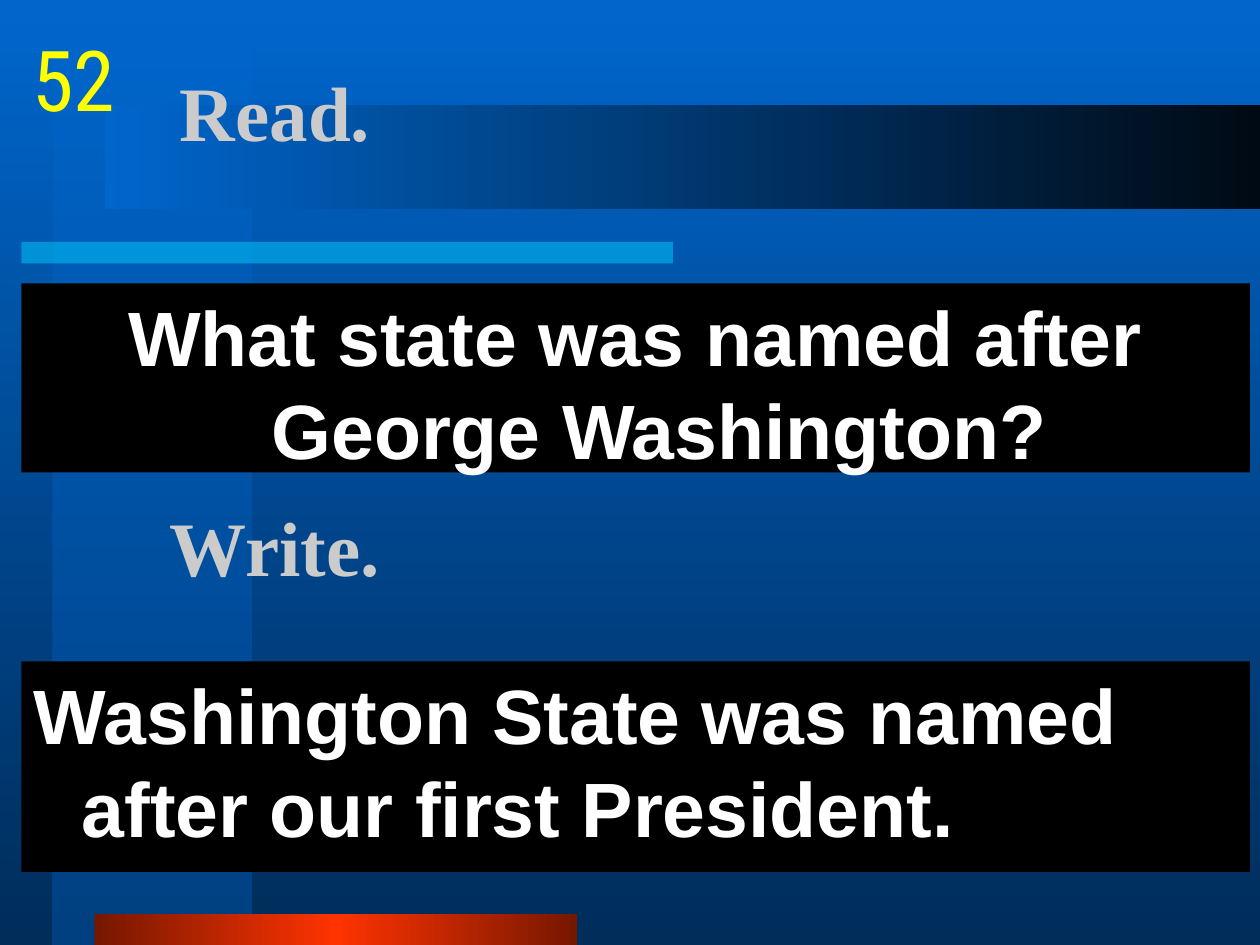
import lxml.etree
import pptx
import pptx.dml.color
import pptx.enum.shapes
import pptx.enum.text
import pptx.oxml.ns
import pptx.util

Inches = pptx.util.Inches
RGBColor = pptx.dml.color.RGBColor
Align = pptx.enum.text.PP_ALIGN
Anchor = pptx.enum.text.MSO_ANCHOR
qn = pptx.oxml.ns.qn

BLUE = RGBColor(0x00, 0x66, 0xCC)
MID_BLUE = RGBColor(0x00, 0x53, 0xA6)
NAVY = RGBColor(0x00, 0x2D, 0x5A)
MIDNIGHT = RGBColor(0x00, 0x0A, 0x14)
CYAN = RGBColor(0x00, 0xCC, 0xFF)
RED = RGBColor(0xFF, 0x33, 0x00)
DARK_RED = RGBColor(0x76, 0x17, 0x00)
BLACK = RGBColor(0x00, 0x00, 0x00)
WHITE = RGBColor(0xFF, 0xFF, 0xFF)
GRAY = RGBColor(0xCB, 0xCB, 0xCB)
YELLOW = RGBColor(0xFF, 0xFF, 0x00)


def set_alpha(color_element, percent):
    """Make a colour partly transparent."""
    alpha = lxml.etree.SubElement(color_element, qn("a:alpha"))
    alpha.set("val", str(percent * 1000))


def fill_gradient(fill, owner, colors, angle=0, alpha=100):
    """Fill with evenly spaced colours; the angle runs counterclockwise."""
    fill.gradient()
    fill.gradient_angle = angle
    stops = next(owner.iter(qn("a:gsLst")))
    for stop in list(stops):
        stops.remove(stop)
    for index, color in enumerate(colors):
        stop = lxml.etree.SubElement(stops, qn("a:gs"))
        stop.set("pos", str(100000 * index // (len(colors) - 1)))
        value = lxml.etree.SubElement(stop, qn("a:srgbClr"))
        value.set("val", str(color))
        if alpha < 100:
            set_alpha(value, alpha)


def add_bar(slide, box, colors, angle=0, alpha=100):
    """Add a borderless rectangle with a solid or gradient fill."""
    shape = slide.shapes.add_shape(
        pptx.enum.shapes.MSO_SHAPE.RECTANGLE, *map(Inches, box))
    shape.shadow.inherit = False
    shape.line.fill.background()
    if len(colors) > 1:
        fill_gradient(shape.fill, shape.element, colors, angle, alpha)
    else:
        shape.fill.solid()
        shape.fill.fore_color.rgb = colors[0]
        if alpha < 100:
            set_alpha(next(shape.element.iter(qn("a:srgbClr"))), alpha)
    return shape


def write_text(shape, text, font="Arial", size=44, color=WHITE, bold=True,
               align=Align.LEFT, anchor=Anchor.TOP, wrap=True, hanging=False,
               side_margin=0.1):
    """Write one formatted paragraph into a shape."""
    frame = shape.text_frame
    frame.word_wrap = wrap
    frame.vertical_anchor = anchor
    frame.margin_left = frame.margin_right = Inches(side_margin)
    paragraph = frame.paragraphs[0]
    paragraph.alignment = align
    run = paragraph.add_run()
    run.text = text
    run.font.name = font
    run.font.size = pptx.util.Pt(size)
    run.font.bold = bold
    run.font.color.rgb = color
    if hanging:
        properties = paragraph._p.get_or_add_pPr()
        properties.set("marL", str(Inches(0.38)))
        properties.set("indent", str(-Inches(0.38)))
        spacing = lxml.etree.SubElement(properties, qn("a:spcBef"))
        lxml.etree.SubElement(spacing, qn("a:spcPct")).set("val", "20000")


def add_backdrop(slide):
    """Paint the background and its decorative bars."""
    fill_gradient(slide.background.fill, slide.element, [BLUE, NAVY], angle=270)
    add_bar(slide, (0.42, 0, 1.58, 7.5), [BLUE, MID_BLUE], angle=270, alpha=50)
    add_bar(slide, (0.17, 1.92, 5.17, 0.17), [CYAN], alpha=50)
    add_bar(slide, (0.75, 7.25, 3.83, 0.25), [DARK_RED, RED, DARK_RED])
    add_bar(slide, (0.83, 0.83, 9.17, 0.83), [BLUE, MIDNIGHT])


def add_heading(slide, box, text):
    """Add a gray instruction heading."""
    shape = slide.shapes.add_textbox(*map(Inches, box))
    write_text(shape, text, font="Times New Roman", color=GRAY,
               anchor=Anchor.MIDDLE)


def add_panel(slide, box, text, align=Align.LEFT):
    """Add a black panel holding a sentence with a hanging indent."""
    write_text(add_bar(slide, box, [BLACK]), text, align=align, hanging=True)


def add_number(slide, box, text):
    """Add the question number on a single line."""
    shape = slide.shapes.add_textbox(*map(Inches, box))
    write_text(shape, text, font="Roboto Condensed", size=48, color=YELLOW,
               bold=False, align=Align.CENTER, wrap=False, side_margin=0)


def main():
    """Build and save the slide."""
    presentation = pptx.Presentation()
    presentation.slide_width = Inches(10)
    presentation.slide_height = Inches(7.5)
    slide = presentation.slides.add_slide(presentation.slide_layouts[6])
    add_backdrop(slide)
    add_heading(slide, (1.33, 0.25, 8.5, 1.25), "Read.")
    add_panel(slide, (0.17, 2.25, 9.75, 1.5),
              "What state was named after George Washington?", Align.CENTER)
    add_heading(slide, (1.25, 3.5, 8.5, 1.67), "Write.")
    add_panel(slide, (0.17, 5.25, 9.75, 1.67),
              "Washington State was named after our first President.")
    add_number(slide, (0.17, 0.17, 0.83, 0.83), "52")
    presentation.save("out.pptx")


if __name__ == "__main__":
    main()
